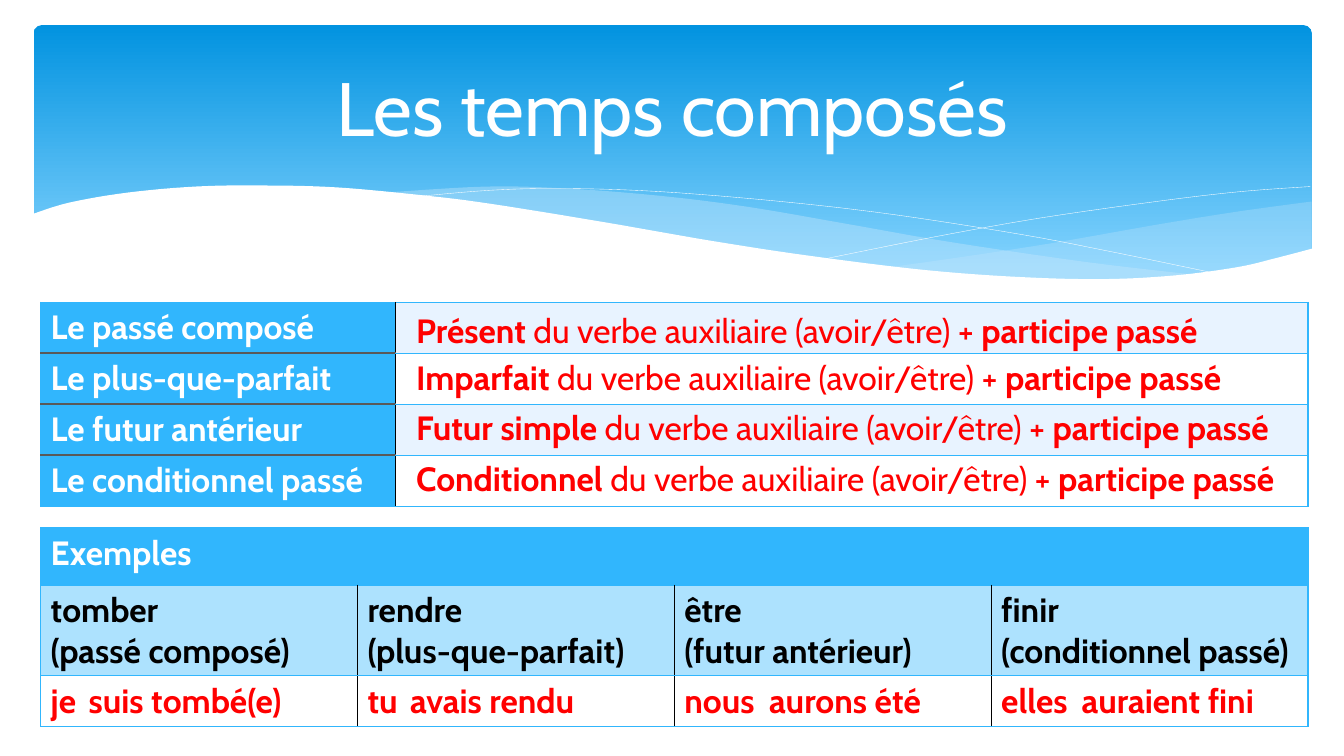
from pptx import Presentation, util as u
from pptx.dml import color
from pptx.enum import shapes, text
from pptx.oxml import ns, xmlchemy as xc

WIDE, HIGH = 13.33, 7.5
FONT = "Cabin"
BLUE, PALE, ICE, MIST = "31B6FD", "ADE2FE", "E8F3FF", "C6E7FC"
WHITE, BLACK, GREY, RED = "FFFFFF", "000000", "595959", "FF0000"

RIGHT = [
    [(100, 64.8), (94.2, 68.5), (87.9, 73.3), (79.3, 80.4), (71.6, 85.9), (67, 88.9)],
    [(67, 88.9), (71.5, 91.1), (78.2, 93.3), (85.2, 93.3), (91.7, 90.7), (96.5, 86.7),
     (100, 82.2)],
]
MIDDLE = [
    [(91.2, 91.9), (82.3, 87), (71.6, 79.6), (63.6, 73), (55.8, 66.7), (48.8, 62.6),
     (41.6, 60), (35.4, 59.3), (27.5, 61.5)],
    [(27.5, 61.5), (35.5, 65.9), (44.6, 73), (56.9, 82.6), (65.8, 88.5), (74.8, 92.6),
     (83.4, 93.7), (91.2, 91.9)],
]
FALL = [[(29.9, 63), (35.6, 60.7), (41.2, 60), (48.8, 61.1), (58.5, 64.8), (67.3, 69.6),
         (77.4, 77), (84.8, 83.7), (92.8, 91.5)]]
RISE = [[(61.9, 85.9), (70.5, 77.8), (79, 70.7), (88.5, 64.4), (94.6, 61.1), (99.9, 59.3)]]
FRONT = [
    [(-0.2, 69.6), (2.8, 65.2), (7.4, 61.5), (12.7, 59.3), (17.7, 58.9), (23.7, 59.6),
     (30.6, 62.6), (35.7, 65.6), (44.4, 72.2), (53.1, 79.3), (60.8, 84.8), (69.8, 90),
     (77.4, 92.6), (83.9, 93.3), (89.4, 91.9), (94.2, 88.9), (97.2, 85.6), (100.2, 81.9)],
    [(100.2, 112.6), (-0.2, 112.6)],
]

TENSES = [
    ("Le passé composé", "Présent ", 40.4),
    ("Le plus-que-parfait", "Imparfait ", 46.53),
    ("Le futur antérieur", "Futur simple ", 53.2),
    ("Le conditionnel passé", "Conditionnel ", 59.87),
]
VERBS = [
    ("tomber", "(passé composé)", "je", "suis tombé(e)", 5.85),
    ("rendre", "(plus-que-parfait)", "tu", "avais rendu", 29.78),
    ("être", "(futur antérieur)", "nous", "aurons été", 56.49),
    ("finir", "(conditionnel passé)", "elles", "auraient fini", 79.74),
]


def rgb(code):
    return color.RGBColor.from_string(code)


def place(box):
    x, y, w, h = box
    return [u.Inches(n * side / 100)
            for n, side in ((x, WIDE), (y, HIGH), (w, WIDE), (h, HIGH))]


def write(par, words, tint, size=24, bold=True):
    run = par.add_run()
    run.text = words
    run.font.name = FONT
    run.font.size = u.Pt(size)
    run.font.bold = bold
    run.font.color.rgb = rgb(tint)


def smooth(knots, steps=6):
    ends = [knots[0], *knots, knots[-1]]
    dots = [knots[0]]
    for a, b, c, d in zip(ends, ends[1:], ends[2:], ends[3:]):
        for step in range(1, steps + 1):
            t = step / steps
            dots.append(tuple(
                (2 * q + (r - p) * t + (2 * p - 5 * q + 4 * r - s) * t ** 2
                 + (3 * q - p - 3 * r + s) * t ** 3) / 2
                for p, q, r, s in zip(a, b, c, d)))
    return dots


def wave(slide, box, edges, fill=None, alpha=100):
    x, y, w, h = place(box)
    dots = [(round(x + w * p / 100), round(y + h * q / 100))
            for edge in edges for p, q in smooth(edge)]
    pen = slide.shapes.build_freeform(*dots[0])
    pen.add_line_segments(dots[1:], close=fill is not None)
    form = pen.convert_to_shape()
    form.shadow.inherit = False
    if fill:
        form.line.fill.background()
        form.fill.solid()
        form.fill.fore_color.rgb = rgb(fill)
        tone = form._element.spPr.find(".//" + ns.qn("a:srgbClr"))
        mark = xc.OxmlElement("a:alpha")
        mark.set("val", str(alpha * 1000))
        tone.append(mark)
    else:
        form.fill.background()
        form.line.color.rgb = rgb(WHITE)
        form.line.width = u.Pt(0.25)


def banner(slide, box):
    card = slide.shapes.add_shape(shapes.MSO_SHAPE.ROUNDED_RECTANGLE, *place(box))
    card.adjustments[0] = 0.03
    card.shadow.inherit = False
    card.line.fill.background()
    card.fill.gradient()
    card.fill.gradient_angle = 270
    for stop, tint, pos in zip(card.fill.gradient_stops, ("0293E0", "83D3FE"), (0, 0.9)):
        stop.color.rgb = rgb(tint)
        stop.position = pos
    wave(slide, box, RIGHT, MIST, 29)
    wave(slide, box, MIDDLE, MIST, 40)
    wave(slide, box, FALL)
    wave(slide, box, RISE)
    wave(slide, box, FRONT, WHITE)


def heading(slide, box, words):
    title = slide.shapes.title
    title.left, title.top, title.width, title.height = place(box)
    slide.shapes._spTree.append(title._element)
    frame = title.text_frame
    frame.auto_size = text.MSO_AUTO_SIZE.NONE
    frame.vertical_anchor = text.MSO_ANCHOR.MIDDLE
    par = frame.paragraphs[0]
    par.alignment = text.PP_ALIGN.CENTER
    write(par, words, WHITE, 54, False)


def label(slide, box, runs):
    frame = slide.shapes.add_textbox(*place(box)).text_frame
    frame.word_wrap = True
    for words, bold in runs:
        write(frame.paragraphs[0], words, RED, bold=bold)


def grid(slide, box, cols, rows):
    x, y, w, h = place(box)
    table = slide.shapes.add_table(len(rows), len(cols), x, y, w, h).table
    table.first_row = table.horz_banding = False
    for col, part in zip(table.columns, cols):
        col.width = round(w * part / sum(cols))
    for row, part in zip(table.rows, rows):
        row.height = round(h * part / sum(rows))
    return table


def dress(cell, fill, sides, lines=(), tint=BLACK):
    props = cell._tc.get_or_add_tcPr()
    for side, (hue, size) in zip("LRTB", sides):
        edge = xc.OxmlElement("a:ln" + side)
        edge.set("w", str(u.Pt(size)))
        paint = xc.OxmlElement("a:solidFill")
        tone = xc.OxmlElement("a:srgbClr")
        tone.set("val", hue)
        paint.append(tone)
        edge.append(paint)
        props.append(edge)
    cell.fill.solid()
    cell.fill.fore_color.rgb = rgb(fill)
    frame = cell.text_frame
    for i, words in enumerate(lines):
        write(frame.add_paragraph() if i else frame.paragraphs[0], words, tint)


def tenses(slide, box):
    table = grid(slide, box, (28, 72), (1,) * len(TENSES))
    blue, black, grey = (BLUE, 1), (BLACK, 1), (GREY, 1.5)
    last = len(TENSES) - 1
    for i, (name, mood, top) in enumerate(TENSES):
        dress(table.cell(i, 0), BLUE,
              (blue, black, grey if i else blue, grey if i < last else blue),
              [name], WHITE)
        dress(table.cell(i, 1), WHITE if i % 2 else ICE, (black, blue, blue, blue))
        label(slide, (30.23, top, 66.24, 6.67),
              [(mood, True), ("du verbe auxiliaire (avoir/être) + ", False),
               ("participe passé", True)])


def samples(slide, box):
    table = grid(slide, box, (1,) * len(VERBS), (0.57, 0.9, 0.5))
    blue, black = (BLUE, 1), (BLACK, 1)
    table.cell(0, 0).merge(table.cell(0, 1))
    last = len(VERBS) - 1
    for i, (verb, tense, who, form, left) in enumerate(VERBS):
        sides = (black if i else blue, black if i < last else blue, blue, blue)
        dress(table.cell(0, i), BLUE, (blue,) * 4, [] if i else ["Exemples"], WHITE)
        dress(table.cell(1, i), PALE, sides, [verb, tense])
        dress(table.cell(2, i), WHITE, sides, [who], RED)
        label(slide, (left, 89.33, 17.5, 6.67), [(form, True)])


def main():
    deck = Presentation()
    deck.slide_width, deck.slide_height = u.Inches(WIDE), u.Inches(HIGH)
    slide = deck.slides.add_slide(deck.slide_layouts[5])
    banner(slide, (2.5, 3.33, 95.1, 36))
    heading(slide, (5, 4.93, 90, 18.27), "Les temps composés")
    tenses(slide, (3.02, 40, 94.3, 27))
    samples(slide, (3.02, 69.8, 94.3, 26.27))
    deck.save("out.pptx")


if __name__ == "__main__":
    main()
